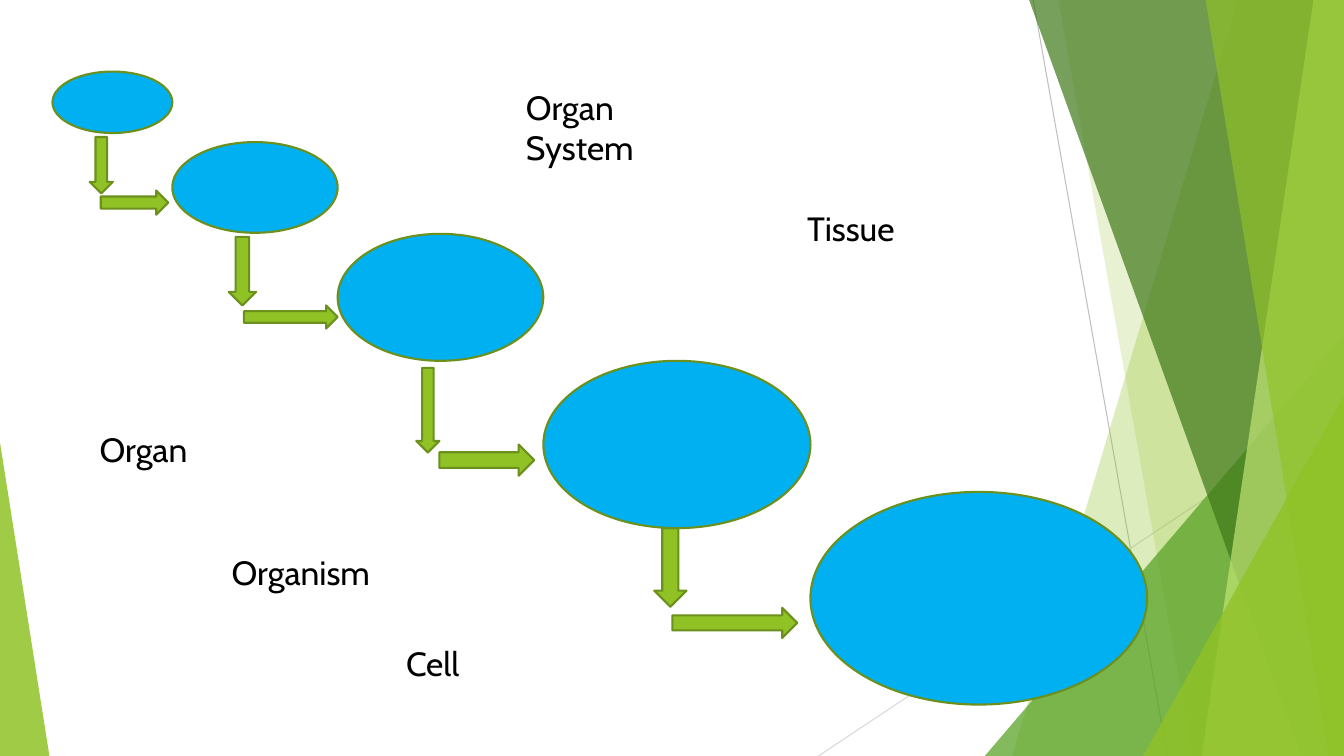
"""Build a slide that steps through the levels of organisation of living things."""
from dataclasses import dataclass
from itertools import accumulate

from lxml import etree
from pptx import Presentation
from pptx import util as u
from pptx.dml.color import RGBColor
from pptx.enum import shapes, text
from pptx.oxml.ns import qn

COLUMNS, ROWS = 133.33, 75
Preset = shapes.MSO_SHAPE


@dataclass(frozen=True)
class Theme:
    leaf: str = "90C226"
    grass: str = "54A021"
    forest: str = "3F7819"
    lime: str = "C0E474"
    edge: str = "6B901C"
    sky: str = "00B0F0"
    ink: str = "000000"
    ray_dark: str = "BFBFBF"
    ray_light: str = "D9D9D9"
    font: str = "Cabin"
    label_size: float = 24
    edge_width: float = 1.5
    ray_width: float = 0.75


@dataclass(frozen=True)
class Box:
    column: float
    row: float
    columns: float
    rows: float


@dataclass(frozen=True)
class Ray:
    start: tuple[float, float]
    end: tuple[float, float]
    color: str


@dataclass(frozen=True)
class Band:
    top_column: float
    bottom_column: float
    color: str
    opacity: int


@dataclass(frozen=True)
class Wedge:
    box: Box
    apex: float
    color: str
    opacity: int


@dataclass(frozen=True)
class Level:
    columns: float
    row: float
    rows: float


@dataclass(frozen=True)
class Step:
    down: Box
    right: Box


@dataclass(frozen=True)
class Label:
    words: str
    box: Box


THEME = Theme()

RAYS = [
    Ray((102.5, 0), (115.8, ROWS), THEME.ray_dark),
    Ray((COLUMNS, 40.3), (81.2, ROWS), THEME.ray_light),
]
FACETS = [
    Band(122.8, 100.4, THEME.leaf, 30),
    Band(105, 118.3, THEME.leaf, 20),
    Wedge(Box(97.7, 33.3, 35.6, 41.7), 1, THEME.grass, 72),
    Band(102.1, 129.1, THEME.forest, 70),
    Band(130.3, 119.2, THEME.lime, 70),
    Band(119.6, 131.8, THEME.leaf, 65),
    Wedge(Box(113.4, 39.3, 19.9, 35.7), 1, THEME.leaf, 80),
    Wedge(Box(0, 43.9, 4.9, 31.1), 0, THEME.leaf, 85),
]
FIRST_LEVEL_COLUMN = 5.2
LEVELS = [
    Level(11.9, 7.1, 6.1),
    Level(16.4, 14.1, 9),
    Level(20.4, 23.2, 12.6),
    Level(26.5, 35.8, 16.6),
    Level(33.4, 48.8, 21.1),
]
STEPS = [
    Step(Box(8.9, 13.6, 2.3, 5.6), Box(10, 18.9, 6.7, 2.4)),
    Step(Box(22.7, 23.5, 2.7, 6.8), Box(24.2, 30.3, 9.3, 2.3)),
    Step(Box(41.3, 36.5, 2.3, 8.4), Box(43.6, 44.1, 9.4, 3.1)),
    Step(Box(64.9, 52.4, 3.2, 7.8), Box(66.7, 60.3, 12.4, 3)),
]
LABELS = [
    Label("Cell", Box(39.3, 63.3, 13.7, 5)),
    Label("Organism", Box(22, 54.3, 16, 5)),
    Label("Organ System", Box(51.2, 8.1, 13.7, 9.1)),
    Label("Tissue", Box(79.1, 20.1, 13.7, 5)),
    Label("Organ", Box(8.9, 42.1, 13.7, 5)),
]


def across(columns: float) -> int:
    return u.Inches(columns / 10)


def down(rows: float) -> int:
    return u.Inches(rows / 10)


def place(box: Box) -> tuple[int, int, int, int]:
    return across(box.column), down(box.row), across(box.columns), down(box.rows)


def paint(shape, color: str, edge: str | None = None, opacity: int = 100) -> None:
    shape.shadow.inherit = False
    shape.fill.solid()
    shape.fill.fore_color.rgb = RGBColor.from_string(color)
    if opacity < 100:
        tint = shape._element.spPr.find(qn("a:solidFill"))[0]
        etree.SubElement(tint, qn("a:alpha"), val=str(opacity * 1000))
    if edge:
        shape.line.color.rgb = RGBColor.from_string(edge)
        shape.line.width = u.Pt(THEME.edge_width)
    else:
        shape.line.fill.background()


def draw_ray(slide, ray: Ray) -> None:
    (x1, y1), (x2, y2) = ray.start, ray.end
    beam = slide.shapes.add_connector(
        shapes.MSO_CONNECTOR.STRAIGHT, across(x1), down(y1), across(x2), down(y2))
    beam.line.color.rgb = RGBColor.from_string(ray.color)
    beam.line.width = u.Pt(THEME.ray_width)
    etree.SubElement(beam._element.spPr, qn("a:effectLst"))


def draw_band(slide, band: Band) -> None:
    outline = slide.shapes.build_freeform(across(band.top_column), 0)
    corners = [(COLUMNS, 0), (COLUMNS, ROWS), (band.bottom_column, ROWS)]
    outline.add_line_segments([(across(x), down(y)) for x, y in corners])
    paint(outline.convert_to_shape(), band.color, opacity=band.opacity)


def draw_wedge(slide, wedge: Wedge) -> None:
    facet = slide.shapes.add_shape(Preset.ISOSCELES_TRIANGLE, *place(wedge.box))
    facet.adjustments[0] = wedge.apex
    paint(facet, wedge.color, opacity=wedge.opacity)


def draw_outlined(slide, preset: Preset, box: Box, color: str) -> None:
    paint(slide.shapes.add_shape(preset, *place(box)), color, edge=THEME.edge)


def write(slide, words: str, box: Box, *, size: float = THEME.label_size,
          font: str = THEME.font, color: str = THEME.ink) -> None:
    frame = slide.shapes.add_textbox(*place(box)).text_frame
    frame.word_wrap = True
    frame.auto_size = text.MSO_AUTO_SIZE.SHAPE_TO_FIT_TEXT
    run = frame.paragraphs[0].add_run()
    run.text = words
    run.font.size = u.Pt(size)
    run.font.name = font
    run.font.color.rgb = RGBColor.from_string(color)


def main() -> None:
    deck = Presentation()
    deck.slide_width, deck.slide_height = across(COLUMNS), down(ROWS)
    slide = deck.slides.add_slide(deck.slide_layouts[6])

    for ray in RAYS:
        draw_ray(slide, ray)
    for facet in FACETS:
        if isinstance(facet, Band):
            draw_band(slide, facet)
        else:
            draw_wedge(slide, facet)

    level_columns = accumulate((level.columns for level in LEVELS), initial=FIRST_LEVEL_COLUMN)
    for column, level in zip(level_columns, LEVELS):
        box = Box(column, level.row, level.columns, level.rows)
        draw_outlined(slide, Preset.OVAL, box, THEME.sky)
    for step in STEPS:
        draw_outlined(slide, Preset.DOWN_ARROW, step.down, THEME.leaf)
        draw_outlined(slide, Preset.RIGHT_ARROW, step.right, THEME.leaf)
    for label in LABELS:
        write(slide, label.words, label.box)

    deck.save("out.pptx")


if __name__ == "__main__":
    main()
